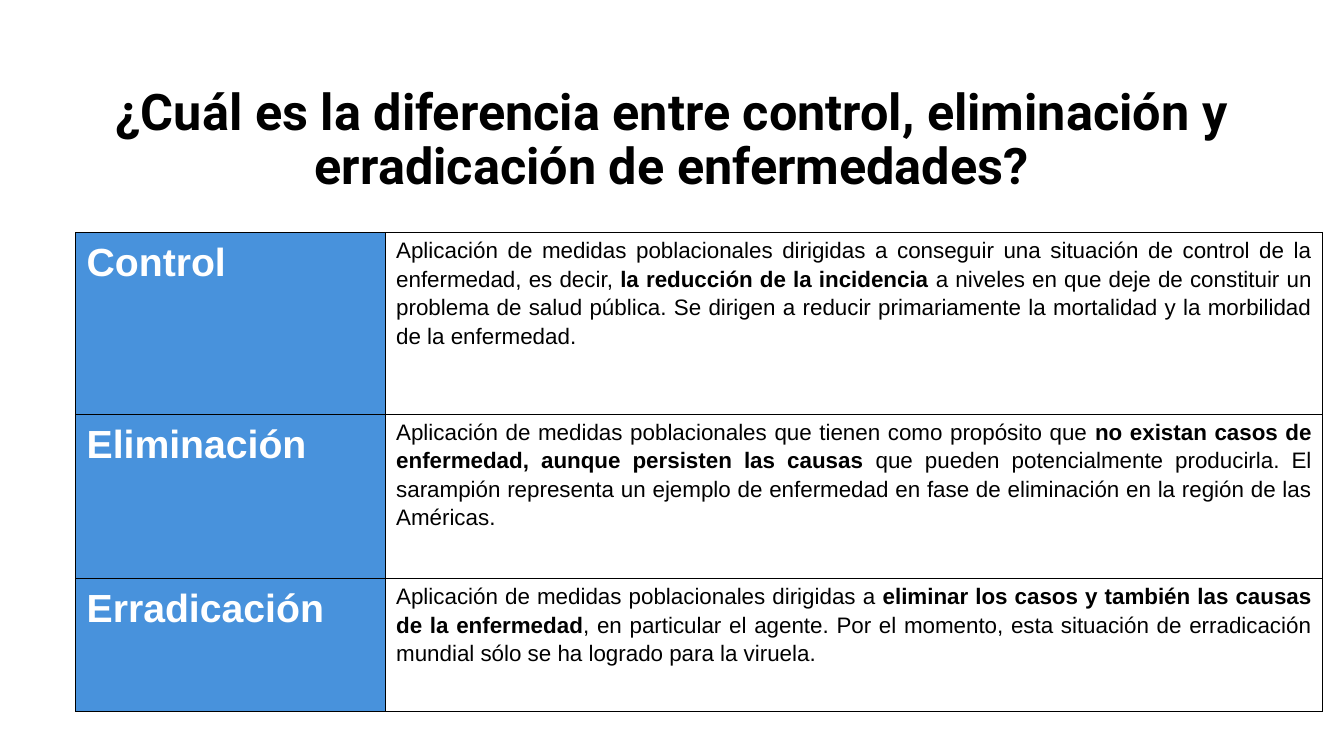
from lxml.etree import SubElement
from pptx import Presentation
from pptx.dml.color import RGBColor
from pptx.enum.text import MSO_ANCHOR, MSO_AUTO_SIZE, PP_ALIGN
from pptx.oxml.ns import qn
from pptx.util import Inches, Pt

COLORS = {"black": "000000", "white": "FFFFFF", "label": "4892DC"}
TITLE = "¿Cuál es la diferencia entre control, eliminación y erradicación de enfermedades?"

# Each row: height, label, and the definition as (text, bold) runs
ROWS = [
    (1.8, "Control", [
        ("Aplicación de medidas poblacionales dirigidas a conseguir una situación "
         "de control de la enfermedad, es decir, ", False),
        ("la reducción de la incidencia ", True),
        ("a niveles en que deje de constituir un problema de salud pública. Se dirigen "
         "a reducir primariamente la mortalidad y la morbilidad de la enfermedad.", False),
    ]),
    (1.63, "Eliminación", [
        ("Aplicación de medidas poblacionales que tienen como propósito que ", False),
        ("no existan casos de enfermedad, aunque persisten las causas ", True),
        ("que pueden potencialmente producirla. El sarampión representa un ejemplo de "
         "enfermedad en fase de eliminación en la región de las Américas.", False),
    ]),
    (1.32, "Erradicación", [
        ("Aplicación de medidas poblacionales dirigidas a ", False),
        ("eliminar los casos y también las causas de la enfermedad", True),
        (", en particular el agente. Por el momento, esta situación de erradicación "
         "mundial sólo se ha logrado para la viruela.", False),
    ]),
]
COLUMN_WIDTHS = [3.07, 9.3]


def rgb(name):
    return RGBColor.from_string(COLORS[name])


def format_run(run, font, size, color, bold):
    run.font.name = font
    run.font.size = Pt(size)
    run.font.color.rgb = rgb(color)
    run.font.bold = bold


def add_borders(cell):
    """Draw a thin black line on all four sides; call before filling the cell."""
    properties = cell._tc.get_or_add_tcPr()
    for side in ("a:lnL", "a:lnR", "a:lnT", "a:lnB"):
        line = SubElement(properties, qn(side), w=str(Pt(1)))
        fill = SubElement(line, qn("a:solidFill"))
        SubElement(fill, qn("a:srgbClr"), val=COLORS["black"])


def fill_cell(cell, runs, size, text_color, fill_color):
    add_borders(cell)
    cell.fill.solid()
    cell.fill.fore_color.rgb = rgb(fill_color)
    cell.margin_left = cell.margin_right = Inches(0.11)
    cell.margin_top, cell.margin_bottom = Inches(0.02), 0
    paragraph = cell.text_frame.paragraphs[0]
    paragraph.alignment = PP_ALIGN.JUSTIFY
    paragraph.line_spacing = 1.15
    for text, bold in runs:
        run = paragraph.add_run()
        run.text = text
        format_run(run, "Arial", size, text_color, bold)


def add_title(slide):
    title = slide.shapes.title
    title.left, title.top = Inches(0.16), Inches(0.92)
    title.width, title.height = Inches(13.01), Inches(0.96)
    frame = title.text_frame
    frame.text = TITLE
    frame.word_wrap = True
    frame.auto_size = MSO_AUTO_SIZE.NONE
    frame.vertical_anchor = MSO_ANCHOR.MIDDLE
    paragraph = frame.paragraphs[0]
    paragraph.alignment = PP_ALIGN.CENTER
    paragraph.line_spacing = 0.9
    paragraph.space_after = Pt(39)
    format_run(paragraph.runs[0], "Roboto", 36, "black", True)


def add_definitions(slide):
    height = sum(row[0] for row in ROWS)
    table = slide.shapes.add_table(
        len(ROWS), len(COLUMN_WIDTHS), Inches(0.75), Inches(2.31),
        Inches(sum(COLUMN_WIDTHS)), Inches(height)).table
    table.first_row = table.horz_banding = False
    for column, width in zip(table.columns, COLUMN_WIDTHS):
        column.width = Inches(width)
    for index, (row_height, label, definition) in enumerate(ROWS):
        table.rows[index].height = Inches(row_height)
        fill_cell(table.cell(index, 0), [(label, True)], 28, "white", "label")
        fill_cell(table.cell(index, 1), definition, 16, "black", "white")


def main():
    presentation = Presentation()
    presentation.slide_width = Inches(13.33)
    presentation.slide_height = Inches(7.5)
    slide = presentation.slides.add_slide(presentation.slide_layouts[5])
    add_title(slide)
    add_definitions(slide)
    presentation.save("out.pptx")


if __name__ == "__main__":
    main()
